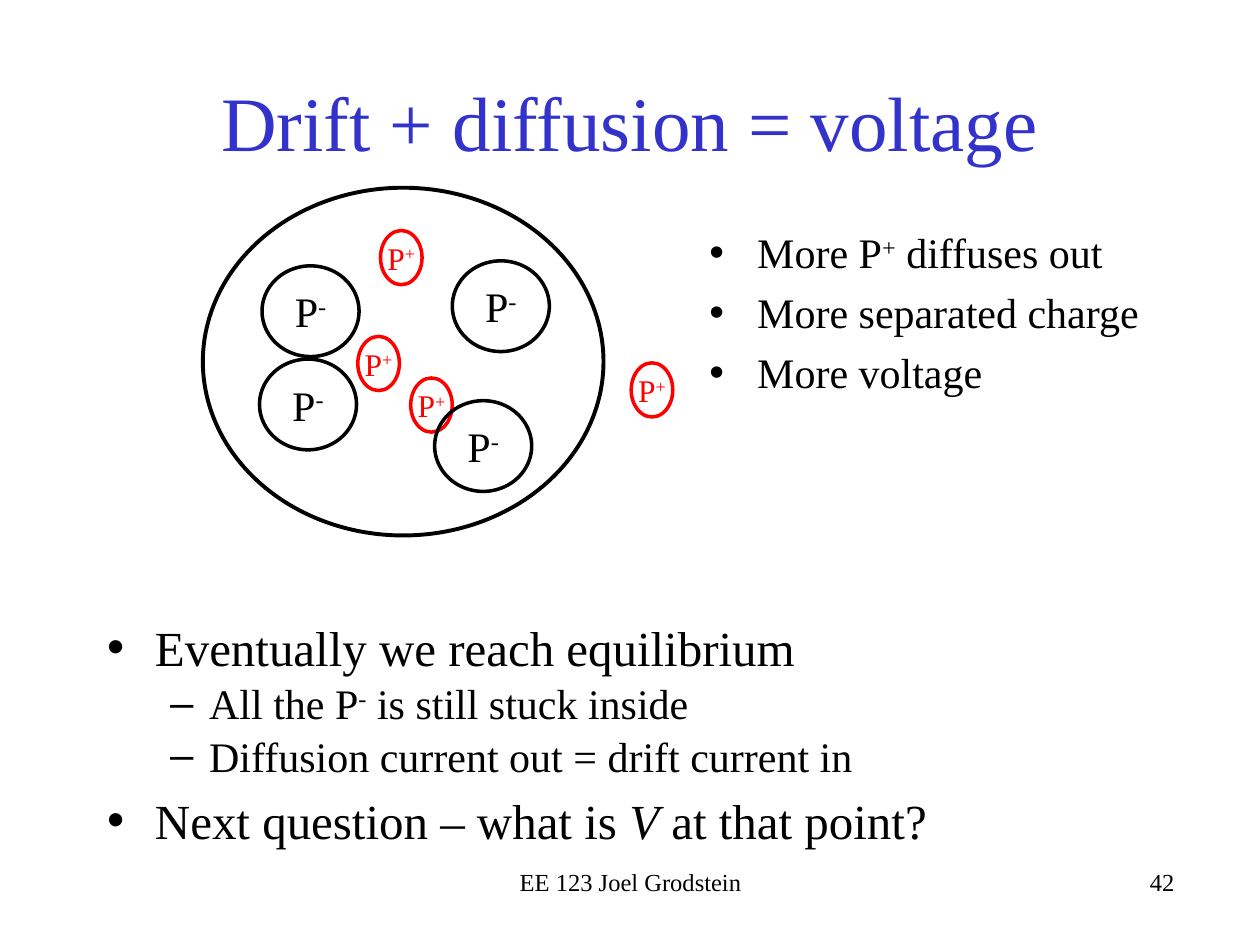
"""Builds the slide on drift, diffusion and voltage in a cell."""
from lxml.etree import SubElement
from pptx import Presentation
from pptx.dml.color import RGBColor
from pptx.enum.shapes import MSO_SHAPE as SHAPE
from pptx.enum.text import MSO_ANCHOR as ANCHOR, MSO_AUTO_SIZE as AUTO, PP_ALIGN as ALIGN
from pptx.oxml.ns import qn
from pptx.util import Inches, Pt

COLORS = {"title": "3333CC", "text": "000000", "plus": "FF0000"}
FONT = "Times New Roman"


def write(paragraph, pieces, size, color="text", align=None):
    """Write (text, style) pieces as formatted runs."""
    paragraph.alignment = align
    for text, style in pieces:
        run = paragraph.add_run()
        run.text = text
        run.font.name = FONT
        run.font.size = Pt(size)
        run.font.color.rgb = RGBColor.from_string(COLORS[color])
        if style == "super":
            run.font._element.set("baseline", "30000")
        elif style == "italic":
            run.font.italic = True


def place(shape, left, top, width, height):
    """Move and size a shape, in inches."""
    shape.left, shape.top = Inches(left), Inches(top)
    shape.width, shape.height = Inches(width), Inches(height)


deck = Presentation()
deck.slide_width, deck.slide_height = Inches(10), Inches(7.5)
slide = deck.slides.add_slide(deck.slide_layouts[3])
title, effects, equilibrium = list(slide.placeholders)[:3]

place(title, 0.75, 0.33, 8.5, 1.25)
title.text_frame.vertical_anchor = ANCHOR.MIDDLE
title.text_frame.auto_size = AUTO.NONE
write(title.text_frame.paragraphs[0], [("Drift + diffusion = voltage", None)], 44, "title", ALIGN.CENTER)

place(effects, 5.53, 1.75, 4.32, 1.67)
place(equilibrium, 0.75, 4.85, 7.78, 1.9)
effect_lines = [
    (0, 24, [("More P", None), ("+", "super"), (" diffuses out", None)]),
    (0, 24, [("More separated charge", None)]),
    (0, 24, [("More voltage", None)]),
]
equilibrium_lines = [
    (0, 28, [("Eventually we reach equilibrium", None)]),
    (1, 24, [("All the P", None), ("-", "super"), (" is still stuck inside", None)]),
    (1, 24, [("Diffusion current out = drift current in", None)]),
    (0, 28, [("Next question – what is ", None), ("V", "italic"), (" at that point?", None)]),
]
LEVELS = [("•", 0.38, 0.38, 5.5), ("–", 0.81, 0.31, 1)]
for body, lines in ((effects, effect_lines), (equilibrium, equilibrium_lines)):
    frame = body.text_frame
    frame.auto_size = AUTO.NONE
    for number, (level, size, pieces) in enumerate(lines):
        paragraph = frame.add_paragraph() if number else frame.paragraphs[0]
        bullet, margin, hanging, space = LEVELS[level]
        write(paragraph, pieces, size)
        paragraph.level = level
        paragraph.space_before = Pt(space)
        properties = paragraph._p.get_or_add_pPr()
        properties.set("marL", str(Inches(margin)))
        properties.set("indent", str(-Inches(hanging)))
        SubElement(properties, qn("a:buChar")).set("char", bullet)

cell = (1.61, 1.49, 3.18, 2.76, 2.25, "text", None, 24)
plus_ions = [(left, top, 0.33, 0.43, 2, "plus", "+", 18)
             for left, top in ((3.02, 1.83), (2.84, 2.67), (3.26, 3), (5.01, 2.88))]
minus_ions = [(left, top, 0.77, 0.72, 2, "text", "-", 24)
              for left, top in ((2.08, 2.11), (3.59, 2.07), (2.06, 2.85), (3.45, 3.18))]
for left, top, width, height, weight, color, charge, size in [cell, *plus_ions, *minus_ions]:
    oval = slide.shapes.add_shape(SHAPE.OVAL, Inches(left), Inches(top), Inches(width), Inches(height))
    oval.shadow.inherit = False
    oval.fill.background()
    oval.line.color.rgb = RGBColor.from_string(COLORS[color])
    oval.line.width = Pt(weight)
    if charge:
        frame = oval.text_frame
        frame.margin_left = frame.margin_right = frame.margin_top = frame.margin_bottom = 0
        frame.word_wrap = False
        frame.vertical_anchor = ANCHOR.MIDDLE
        write(frame.paragraphs[0], [("P", None), (charge, "super")], size, color, ALIGN.CENTER)

for text, left, height, align in (("EE 123 Joel Grodstein", 3.42, 0.34, ALIGN.CENTER),
                                  ("42", 6.25, 0.5, ALIGN.RIGHT)):
    footer = slide.shapes.add_textbox(Inches(left), Inches(6.83), Inches(3.17), Inches(height))
    footer.text_frame.word_wrap = True
    write(footer.text_frame.paragraphs[0], [(text, None)], 14, align=align)

deck.save("out.pptx")
